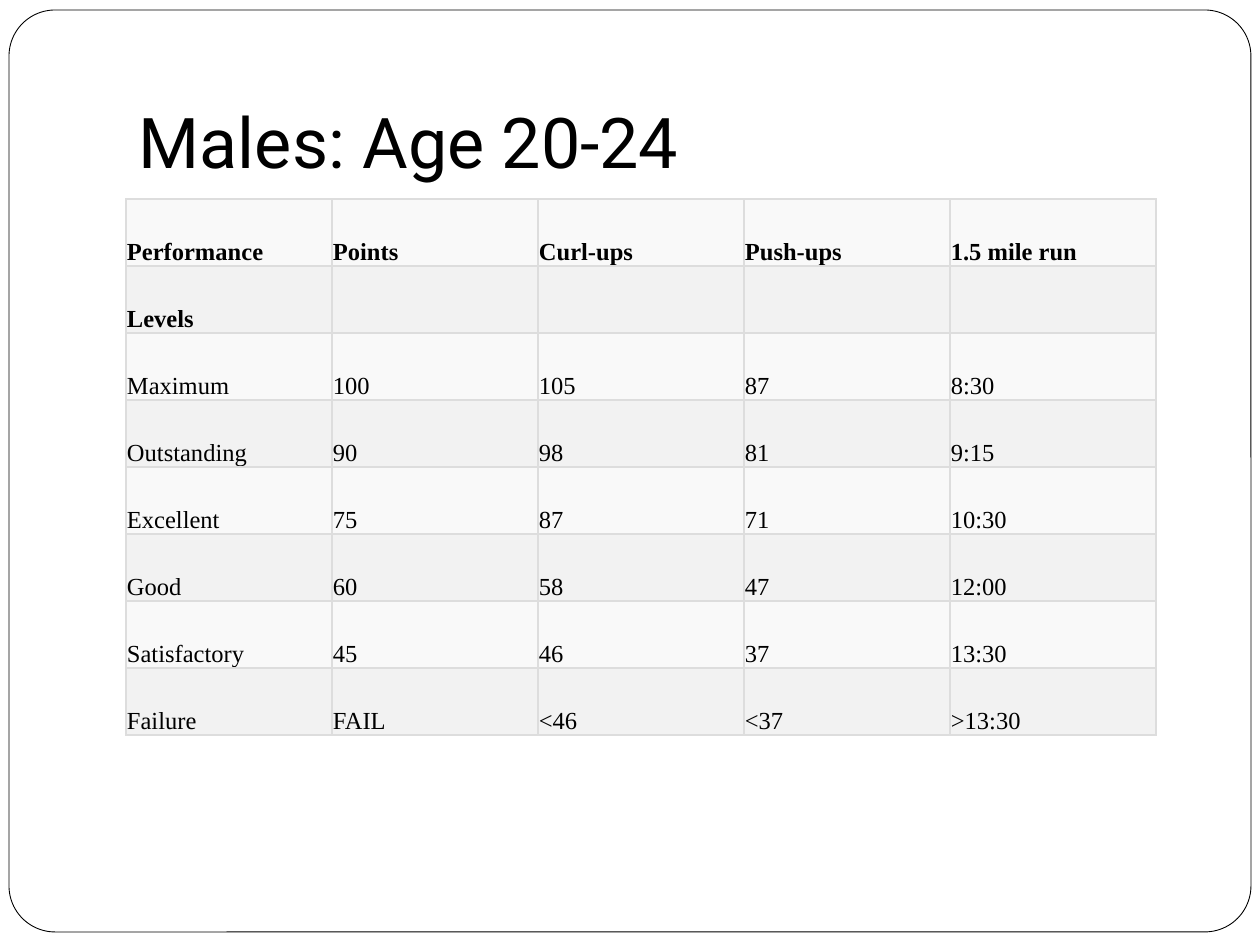
from lxml import etree
from pptx import Presentation
from pptx.dml.color import RGBColor
from pptx.enum.shapes import MSO_SHAPE
from pptx.enum.text import MSO_ANCHOR
from pptx.oxml.ns import qn
from pptx.util import Pt

ROUNDED = MSO_SHAPE.ROUNDED_RECTANGLE
BOTTOM = MSO_ANCHOR.BOTTOM
EMU_PER_PX = 914400 / 126

BLACK, WHITE, BORDER = "000000", "FFFFFF", "DDDDDD"
BANDS = ("F9F9F9", "F2F2F2")
COLUMN_WIDTH, ROW_HEIGHT = 206, 67
HEADER_ROWS = 2

STANDARDS = [
    ("Performance", "Points", "Curl-ups", "Push-ups", "1.5 mile run"),
    ("Levels", "", "", "", ""),
    ("Maximum", "100", "105", "87", "8:30"),
    ("Outstanding", "90", "98", "81", "9:15"),
    ("Excellent", "75", "87", "71", "10:30"),
    ("Good", "60", "58", "47", "12:00"),
    ("Satisfactory", "45", "46", "37", "13:30"),
    ("Failure", "FAIL", "<46", "<37", ">13:30"),
]


def px(length):
    return round(length * EMU_PER_PX)


def color(hex_value):
    return RGBColor.from_string(hex_value)


def set_font(paragraph, name, size, bold=False):
    font = paragraph.font
    font.name, font.size, font.bold = name, Pt(size), bold
    font.color.rgb = color(BLACK)


def set_margins(target, left, top, right, bottom):
    target.margin_left, target.margin_top = px(left), px(top)
    target.margin_right, target.margin_bottom = px(right), px(bottom)


def add_frame(slide, left, top, width, height):
    frame = slide.shapes.add_shape(ROUNDED, px(left), px(top), px(width), px(height))
    frame.adjustments[0] = 0.05
    frame.shadow.inherit = False
    frame.fill.solid()
    frame.fill.fore_color.rgb = color(WHITE)
    frame.line.color.rgb = color(BLACK)
    frame.line.width = Pt(0.5)


def add_title(slide, text, left, top, width, height):
    title = slide.shapes.add_textbox(px(left), px(top), px(width), px(height)).text_frame
    title.word_wrap = True
    title.vertical_anchor = BOTTOM
    set_margins(title, 13, 6, 13, 13)
    title.text = text
    set_font(title.paragraphs[0], "Roboto", 40)


def add_borders(cell):
    properties = cell._tc.get_or_add_tcPr()
    for side in ("lnL", "lnR", "lnT", "lnB"):
        line = etree.SubElement(properties, qn(f"a:{side}"), w=str(Pt(1)))
        fill = etree.SubElement(line, qn("a:solidFill"))
        etree.SubElement(fill, qn("a:srgbClr"), val=BORDER)


def fill_cell(cell, text, band, bold):
    add_borders(cell)
    cell.fill.solid()
    cell.fill.fore_color.rgb = color(band)
    cell.vertical_anchor = BOTTOM
    set_margins(cell, 1, 1, 1, 0)
    cell.text = text
    set_font(cell.text_frame.paragraphs[0], "Times New Roman", 14, bold)


def add_standards_table(slide, left, top):
    row_count, column_count = len(STANDARDS), len(STANDARDS[0])
    table = slide.shapes.add_table(
        row_count, column_count, px(left), px(top),
        px(column_count * COLUMN_WIDTH), px(row_count * ROW_HEIGHT)).table
    for column in table.columns:
        column.width = px(COLUMN_WIDTH)
    for index, (row, values) in enumerate(zip(table.rows, STANDARDS)):
        row.height = px(ROW_HEIGHT)
        for cell, value in zip(row.cells, values):
            fill_cell(cell, value, BANDS[index % 2], index < HEADER_ROWS)


def main():
    presentation = Presentation()
    presentation.slide_width, presentation.slide_height = px(1260), px(945)
    slide = presentation.slides.add_slide(presentation.slide_layouts[6])
    add_frame(slide, 9, 10, 1242, 922)
    add_title(slide, "Males: Age 20-24", 126, 38, 1071, 157)
    add_standards_table(slide, 126, 199)
    presentation.save("out.pptx")


if __name__ == "__main__":
    main()
